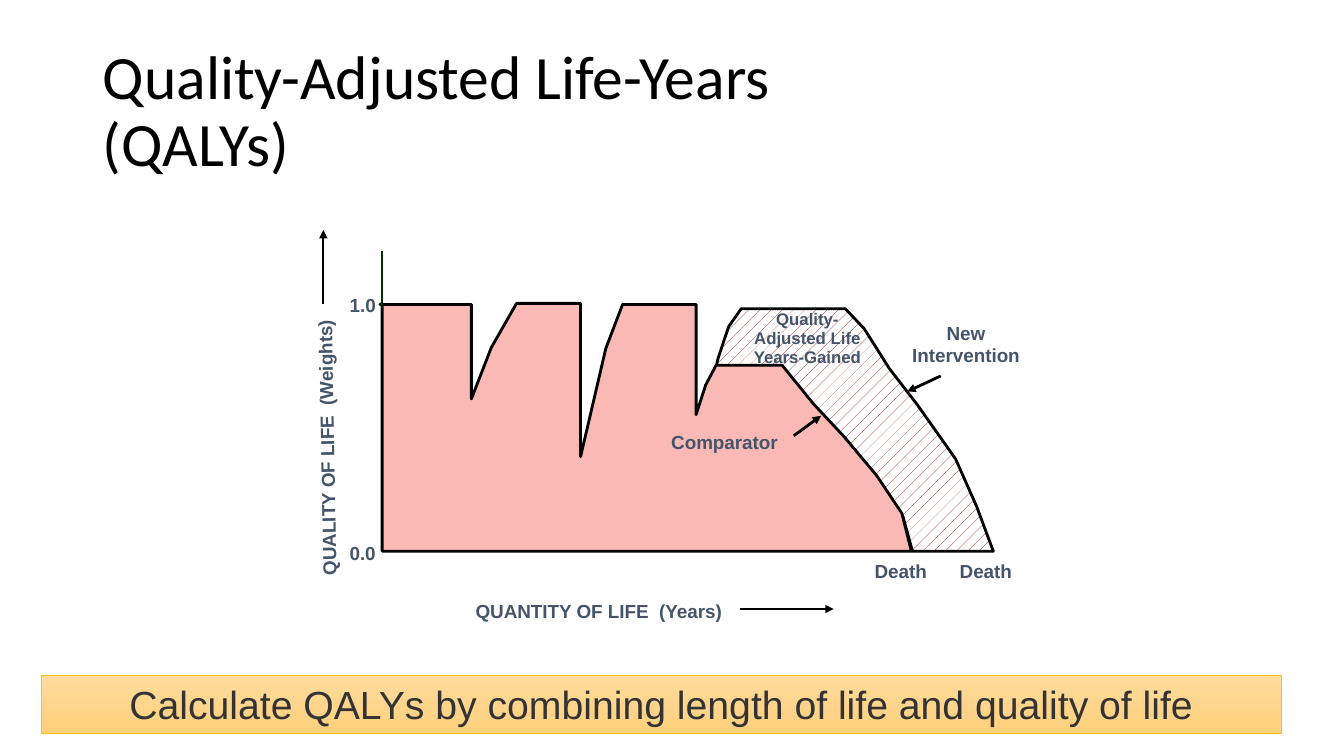
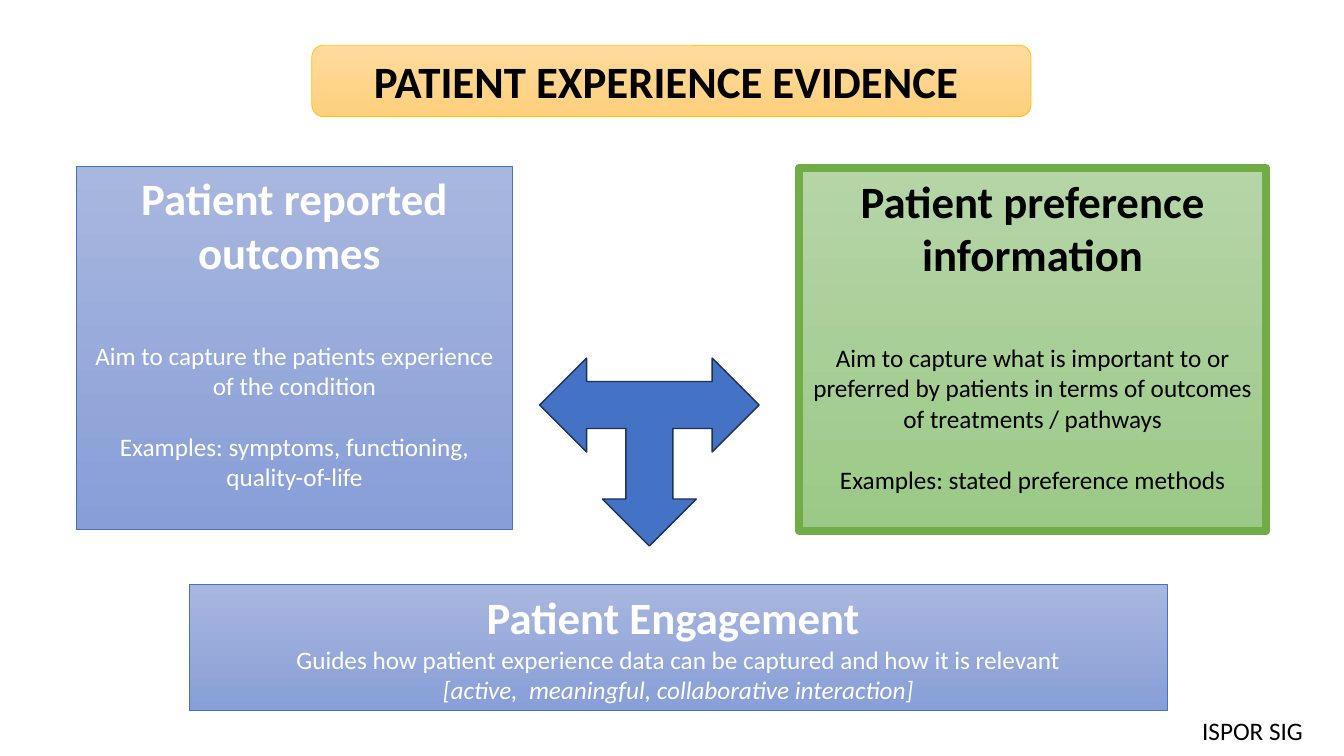
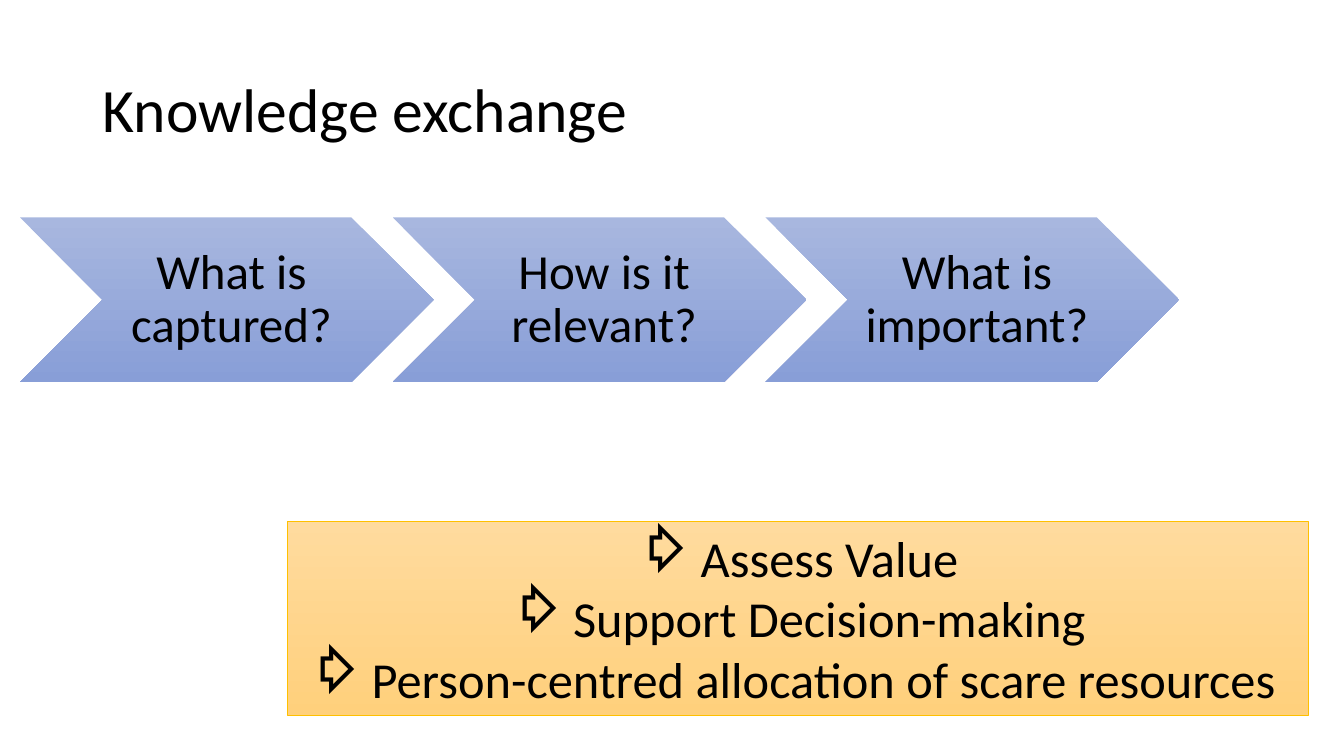
from lxml.etree import SubElement
from pptx import Presentation
from pptx.dml.color import RGBColor
from pptx.enum.dml import MSO_PATTERN
from pptx.enum.shapes import MSO_CONNECTOR, MSO_SHAPE
from pptx.enum.text import MSO_ANCHOR, MSO_AUTO_SIZE, PP_ALIGN
from pptx.oxml.ns import qn
from pptx.util import Pt

PX = 9525  # EMU in one px, 96 px to the inch
BLACK, WHITE, SLATE, GOLD, BLUE, GREEN = "000000", "FFFFFF", "44546A", "FFC000", "4472C4", "70AD47"
GOLD_FADE = ("FFDB9E", "FFD07C")
BLUE_FADE = ("A8B7DF", "889ED7")
GREEN_FADE = ("B5D5A7", "9CC987")
CENTER = PP_ALIGN.CENTER
TITLE_AT = (88, 38, 1104, 139)
TITLE = dict(size=44, anchor=MSO_ANCHOR.MIDDLE, spacing=0.9)
color_of = RGBColor.from_string


def box(slide, at, kind=None, fill=None, line=None, width=0.5):
    """Add a shape, or a text box without kind; a pair as fill is a downward gradient."""
    at = [v * PX for v in at]
    if kind is None:
        return slide.shapes.add_textbox(*at)
    sp = slide.shapes.add_shape(kind, *at)
    sp.shadow.inherit = False
    if isinstance(fill, tuple):
        sp.fill.gradient()
        sp.fill.gradient_angle = 270
        for stop, color in zip(sp.fill.gradient_stops, fill):
            stop.color.rgb = color_of(color)
    else:
        sp.fill.solid()
        sp.fill.fore_color.rgb = color_of(fill)
    if line:
        sp.line.color.rgb = color_of(line)
        sp.line.width = Pt(width)
    else:
        sp.line.fill.background()
    return sp


def write(sp, *paras, size=18, color=BLACK, bold=False, font="Calibri", align=PP_ALIGN.LEFT,
          anchor=MSO_ANCHOR.TOP, inset=(10, 5, 10, 5), spacing=None, bullet=None):
    """Fill a shape; a paragraph is a text or a pair of text and its own format."""
    tf = sp.text_frame
    tf.word_wrap = True
    tf.auto_size = MSO_AUTO_SIZE.NONE
    tf.vertical_anchor = anchor
    tf.margin_left, tf.margin_top, tf.margin_right, tf.margin_bottom = [v * PX for v in inset]
    for i, para in enumerate(paras):
        text, own = (para, {}) if isinstance(para, str) else para
        p = tf.add_paragraph() if i else tf.paragraphs[0]
        p.text = text
        p.alignment = align
        if spacing:
            p.line_spacing = spacing
        if "before" in own:
            p.space_before = Pt(own["before"])
        if bullet:
            pPr = p._p.get_or_add_pPr()
            pPr.set("marL", str(60 * PX))
            pPr.set("indent", str(-60 * PX))
            SubElement(pPr, qn("a:buChar")).set("char", bullet)
        for r in p.runs:
            r.font.name = font
            r.font.size = Pt(own.get("size", size))
            r.font.bold = own.get("bold", bold)
            r.font.italic = own.get("italic", False)
            r.font.color.rgb = color_of(color)


prs = Presentation()
prs.slide_width, prs.slide_height = 1280 * PX, 720 * PX
TITLE_ONLY, BLANK = prs.slide_layouts[5], prs.slide_layouts[6]

# Slide 1: QALY diagram
s = prs.slides.add_slide(TITLE_ONLY)
title = s.shapes.title
title.left, title.top, title.width, title.height = [v * PX for v in TITLE_AT]
write(title, "Quality-Adjusted Life-Years \v(QALYs)", **TITLE)

gained = [(682, 349), (745, 349), (777, 389), (806, 419), (840, 461), (860, 492), (869, 525),
          (946, 525), (930, 482), (910, 437), (874, 386), (847, 351), (823, 313), (805, 294),
          (706, 294), (694, 311), (684, 341)]
comparator = [(364, 289), (364, 525), (868, 525), (859, 489), (835, 453), (804, 416), (775, 385),
              (745, 348), (682, 348), (672, 367), (663, 395), (663, 290), (593, 290), (577, 332),
              (553, 435), (553, 289), (492, 289), (468, 331), (449, 380), (449, 290), (362, 290)]
areas = []
for points in (gained, comparator):
    outline = s.shapes.build_freeform(*points[0], scale=PX)
    outline.add_line_segments(points[1:], close=True)
    area = outline.convert_to_shape()
    area.shadow.inherit = False
    area.line.color.rgb = color_of(BLACK)
    area.line.width = Pt(2)
    areas.append(area)
hatch, solid = [area.fill for area in areas]
hatch.patterned()
hatch.pattern = MSO_PATTERN.PERCENT_10
hatch.fore_color.rgb = color_of("800000")
hatch.back_color.rgb = color_of(WHITE)
solid.solid()
solid.fore_color.rgb = color_of("FAB9B4")

for ends, color, width, arrow in [
    ((308, 290, 308, 219), BLACK, 1.5, True),
    ((364, 293, 364, 239), "003300", 1, False),
    ((756, 415, 782, 396), BLACK, 2, True),
    ((896, 358, 864, 373), BLACK, 2, True),
    ((705, 580, 794, 580), BLACK, 1.5, True),
]:
    cn = s.shapes.add_connector(MSO_CONNECTOR.STRAIGHT, *[v * PX for v in ends])
    cn.line.color.rgb = color_of(color)
    cn.line.width = Pt(width)
    spPr = cn._element.spPr
    if arrow:
        SubElement(spPr.find(qn("a:ln")), qn("a:tailEnd")).set("type", "triangle")
    SubElement(spPr, qn("a:effectLst"))

label = dict(size=13.5, color=SLATE, bold=True, font="Arial", inset=(7, 4, 7, 4))
for at, text in [
    ((446, 567, 379, 27), "QUANTITY OF LIFE  (Years)"),
    ((326, 276, 63, 29), "1.0"),
    ((326, 512, 53, 27), "0.0"),
    ((826, 529, 82, 32), "Death"),
    ((907, 529, 77, 29), "Death"),
]:
    write(box(s, at), text, **label)
quality = box(s, (164, 387, 300, 36))
quality.rotation = 269
write(quality, "QUALITY OF LIFE  (Weights)", **label)
write(box(s, (861, 302, 118, 42)), "New", "Intervention", align=CENTER, **label)
write(box(s, (621, 406, 138, 51)), "Comparator", align=CENTER, **label)
write(box(s, (694, 291, 150, 70)), "Quality-", "Adjusted Life Years-Gained",
      align=CENTER, spacing=0.95, **{**label, "size": 12})

band = box(s, (39, 643, 1181, 55), MSO_SHAPE.RECTANGLE, GOLD_FADE, GOLD)
write(band, "Calculate QALYs by combining length of life and quality of life",
      size=28, color="333333", font="Arial", align=CENTER)

# Slide 2: patient experience evidence
s = prs.slides.add_slide(BLANK)
heading = dict(size=32, bold=True)
for at, fill, line, width, color, paras in [
    ((73, 158, 415, 346), BLUE_FADE, BLUE, 0.5, WHITE, [
        ("Patient reported outcomes ", heading),
        ("Aim to capture the patients experience of the condition", dict(before=44)),
        ("Examples: symptoms, functioning, quality-of-life", dict(before=22))]),
    ((761, 160, 445, 346), GREEN_FADE, GREEN, 6, BLACK, [
        ("Patient preference information", heading),
        ("Aim to capture what is important to or preferred by patients in terms of outcomes "
         "of treatments / pathways", dict(before=44)),
        ("Examples: stated preference methods", dict(before=22))]),
    ((180, 557, 932, 120), BLUE_FADE, BLUE, 0.5, WHITE, [
        ("Patient Engagement ", heading),
        "Guides how patient experience data can be captured and how it is relevant",
        ("[active,  meaningful, collaborative interaction]", dict(italic=True))]),
]:
    write(box(s, at, MSO_SHAPE.RECTANGLE, fill, line, width), *paras, color=color, align=CENTER)
write(box(s, (1055, 676, 196, 38)), "ISPOR SIG", align=PP_ALIGN.RIGHT)
header = box(s, (297, 43, 685, 68), MSO_SHAPE.FLOWCHART_ALTERNATE_PROCESS, GOLD_FADE, GOLD)
write(header, "PATIENT EXPERIENCE EVIDENCE ", align=CENTER, **heading)
arrows = box(s, (514, 341, 209, 179), MSO_SHAPE.LEFT_RIGHT_UP_ARROW, BLUE, "1E3256", 1)
arrows.rotation = 180

# Slide 3: knowledge exchange
s = prs.slides.add_slide(TITLE_ONLY)
title = s.shapes.title
title.left, title.top, title.width, title.height = [v * PX for v in TITLE_AT]
write(title, "Knowledge exchange", **TITLE)
for i, question in enumerate(["What is captured?", "How is it relevant?", "What is important?"]):
    chevron = box(s, (19 + 355 * i, 207, 394, 157), MSO_SHAPE.CHEVRON, BLUE_FADE)
    write(chevron, question, size=35, align=CENTER, anchor=MSO_ANCHOR.MIDDLE,
          inset=(14, 5, 5, 5), spacing=0.9)
results = box(s, (274, 497, 972, 184), MSO_SHAPE.RECTANGLE, GOLD_FADE, GOLD)
write(results, "Assess Value", "Support Decision-making",
      "Person-centred allocation of scare resources ", size=36, align=CENTER, bullet="⇨")

prs.save("out.pptx")
